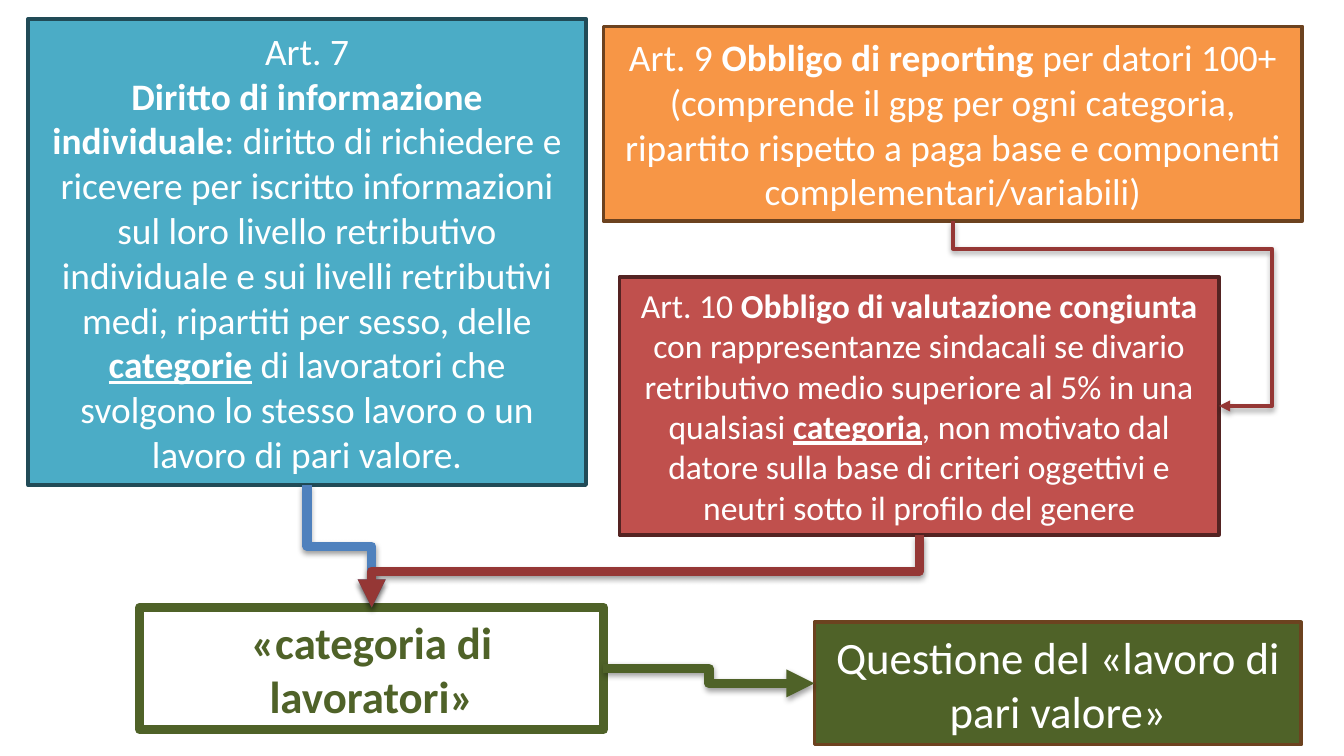
from lxml.etree import SubElement
from pptx import Presentation
from pptx.dml.color import RGBColor
from pptx.enum.shapes import MSO_CONNECTOR, MSO_SHAPE
from pptx.enum.text import MSO_ANCHOR, MSO_AUTO_SIZE, PP_ALIGN
from pptx.oxml.ns import qn
from pptx.util import Pt

FONT = "Calibri"
WHITE, GREEN, BROWN, DARK_RED = "FFFFFF", "4F6228", "6C421F", "953735"
TOP, LEFT, BOTTOM, RIGHT = range(4)  # connection sites of a rectangle

# Each paragraph is a list of runs: (text, style), with b = bold, u = underlined.
BOXES = {
    "information": dict(
        at=(15.1, 10.1, 298.8, 249.8), fill="4BACC6", line="214B57", size=20,
        paragraphs=[
            [("Art. 7", "")],
            [("Diritto di informazione individuale", "b"),
             (": diritto di richiedere e ricevere per iscritto informazioni sul loro "
              "livello retributivo individuale e sui livelli retributivi medi, "
              "ripartiti per sesso, delle ", ""),
             ("categorie", "bu"),
             (" di lavoratori che svolgono lo stesso lavoro o un lavoro di pari valore.", "")],
        ]),
    "reporting": dict(
        at=(323.3, 14.2, 374.4, 104.2), fill="F79646", line=BROWN, size=20,
        paragraphs=[
            [("Art. 9 ", ""), ("Obbligo di reporting ", "b"), ("per datori 100+", "")],
            [("(comprende il gpg per ogni categoria, ripartito rispetto a paga base e "
              "componenti complementari/variabili)", "")],
        ]),
    "assessment": dict(
        at=(331.9, 148.4, 321.1, 138.2), fill="C0504D", line="542322", size=18,
        paragraphs=[
            [("Art. 10 ", ""), ("Obbligo di valutazione congiunta ", "b"),
             ("con rappresentanze sindacali se divario retributivo medio superiore "
              "al 5% in una qualsiasi ", ""),
             ("categoria", "bu"),
             (", non motivato dal datore sulla base di criteri oggettivi e neutri "
              "sotto il profilo del genere", "")],
        ]),
    "equal value": dict(
        at=(436.3, 333.4, 260.8, 65.5), fill=GREEN, line=BROWN, size=24,
        paragraphs=[[("Questione del «lavoro di pari valore»", "")]]),
    "category": dict(
        at=(74.9, 325.4, 248.4, 65.5), line=GREEN, line_width=5, size=24, color=GREEN,
        paragraphs=[[("«categoria di lavoratori»", "b")]]),
}

# from, site, to, site, colour, width, bends as shares of the connector's extent
ARROWS = [
    ("reporting", BOTTOM, "assessment", RIGHT, DARK_RED, 2, (0.15, 1.2)),
    ("information", BOTTOM, "category", TOP, "4F81BD", 5, (0.5,)),
    ("assessment", BOTTOM, "category", TOP, DARK_RED, 5, (0.5,)),
    ("category", RIGHT, "equal value", LEFT, GREEN, 5, (0.5,)),
]


def rgb(value):
    return RGBColor.from_string(value)


def add_run(paragraph, text, size, color, style=""):
    run = paragraph.add_run()
    run.text = text
    font = run.font
    font.name, font.size = FONT, Pt(size)
    font.color.rgb = rgb(color)
    font.bold = "b" in style
    font.underline = "u" in style


def add_box(slide, at, paragraphs, line, size, fill=None, line_width=2, color=WHITE):
    shape = slide.shapes.add_shape(MSO_SHAPE.RECTANGLE, *map(Pt, at))
    shape.shadow.inherit = False
    if fill:
        shape.fill.solid()
        shape.fill.fore_color.rgb = rgb(fill)
    else:
        shape.fill.background()
    shape.line.color.rgb = rgb(line)
    shape.line.width = Pt(line_width)
    frame = shape.text_frame
    frame.word_wrap = True
    frame.auto_size = MSO_AUTO_SIZE.SHAPE_TO_FIT_TEXT
    frame.vertical_anchor = MSO_ANCHOR.MIDDLE
    for index, runs in enumerate(paragraphs):
        paragraph = frame.add_paragraph() if index else frame.paragraphs[0]
        paragraph.alignment = PP_ALIGN.CENTER
        for text, style in runs:
            add_run(paragraph, text, size, color, style)
    return shape


def turn_downwards(connector):
    """Rotate an elbow connector so that it leaves its start vertically."""
    across = connector.end_x - connector.begin_x
    down = connector.end_y - connector.begin_y
    center_x = (connector.begin_x + connector.end_x) // 2
    center_y = (connector.begin_y + connector.end_y) // 2
    transform = connector._element.spPr.find(qn("a:xfrm"))
    for flip in ("flipH", "flipV"):
        transform.attrib.pop(flip, None)
    connector.width, connector.height = abs(down), abs(across)
    connector.left = center_x - abs(down) // 2
    connector.top = center_y - abs(across) // 2
    transform.set("rot", str((270 if across > 0 else 90) * 60000))
    if across > 0:
        transform.set("flipH", "1")


def add_shadow(properties):
    effects = SubElement(properties, qn("a:effectLst"))
    shadow = SubElement(effects, qn("a:outerShdw"), blurRad=str(Pt(3.1)),
                        dist=str(Pt(1.6)), dir="5400000", rotWithShape="0")
    black = SubElement(shadow, qn("a:srgbClr"), val="000000")
    SubElement(black, qn("a:alpha"), val="38000")


def add_arrow(slide, start, start_site, end, end_site, color, width, bends):
    connector = slide.shapes.add_connector(MSO_CONNECTOR.ELBOW, 0, 0, 0, 0)
    connector.begin_connect(start, start_site)
    connector.end_connect(end, end_site)
    if start_site == BOTTOM:
        turn_downwards(connector)
    connector.line.color.rgb = rgb(color)
    connector.line.width = Pt(width)
    properties = connector._element.spPr
    geometry = properties.find(qn("a:prstGeom"))
    geometry.set("prst", f"bentConnector{len(bends) + 2}")
    adjustments = geometry.find(qn("a:avLst"))
    for number, share in enumerate(bends, 1):
        SubElement(adjustments, qn("a:gd"), name=f"adj{number}",
                   fmla=f"val {round(share * 100000)}")
    SubElement(properties.find(qn("a:ln")), qn("a:tailEnd"), type="triangle")
    add_shadow(properties)


def main():
    presentation = Presentation()
    presentation.slide_width, presentation.slide_height = Pt(720), Pt(405)
    slide = presentation.slides.add_slide(presentation.slide_layouts[6])
    boxes = {name: add_box(slide, **box) for name, box in BOXES.items()}
    for start, start_site, end, end_site, *look in ARROWS:
        add_arrow(slide, boxes[start], start_site, boxes[end], end_site, *look)
    presentation.save("out.pptx")


if __name__ == "__main__":
    main()
